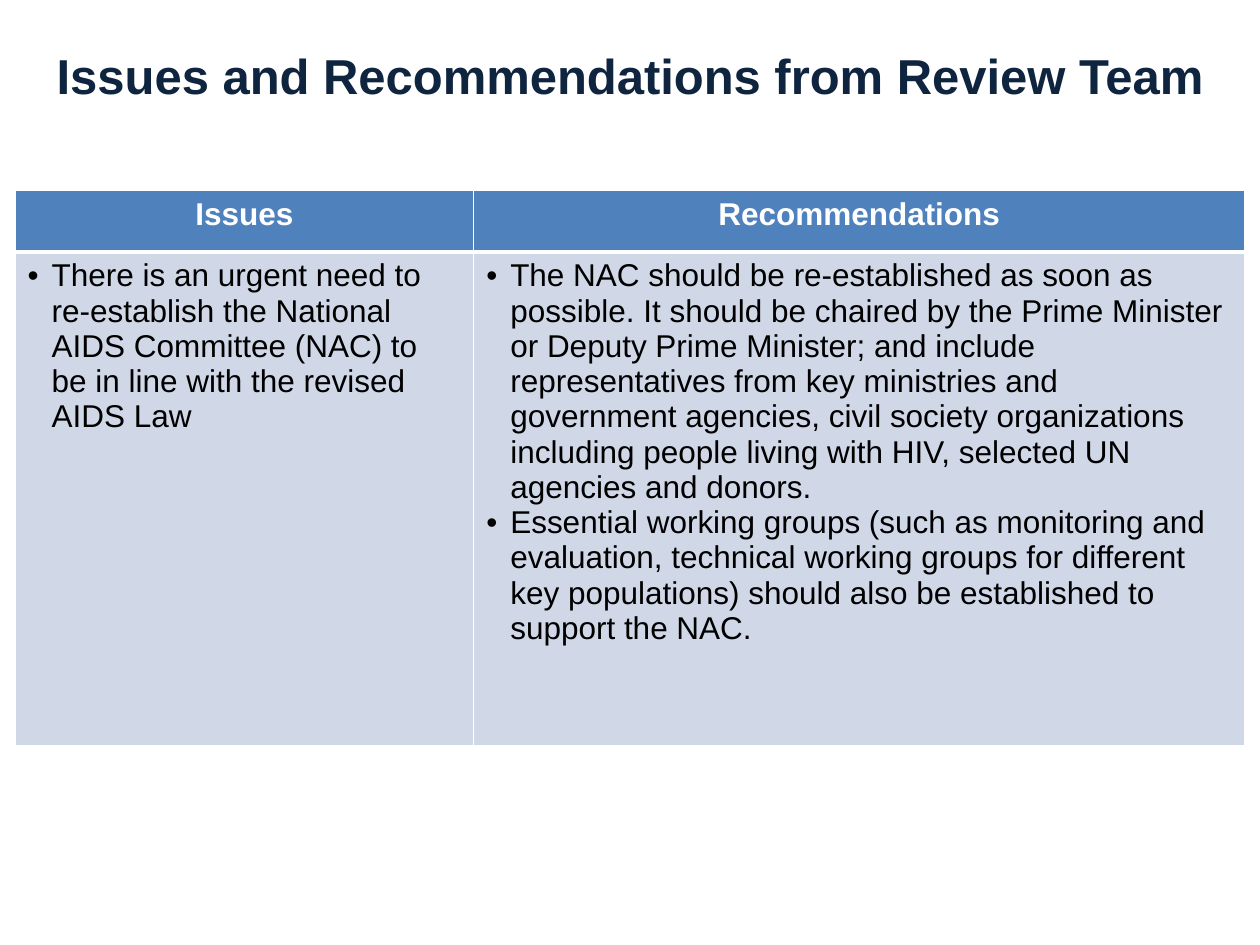
from lxml import etree
from pptx import Presentation
from pptx.dml.color import RGBColor
from pptx.enum import text
from pptx.oxml import ns
from pptx.util import Inches, Pt

COLORS = {"title": "0F243E", "header": "4F81BD", "body": "D0D8E8",
          "white": "FFFFFF", "black": "000000"}
ROWS = [
    [["Issues"], ["Recommendations"]],
    [
        ["There is an urgent need to re-establish the National AIDS Committee (NAC) "
         "to be in line with the revised AIDS Law"],
        ["The NAC should be re-established as soon as possible. It should be chaired by "
         "the Prime Minister or Deputy Prime Minister; and include representatives from "
         "key ministries and government agencies, civil society organizations including "
         "people living with HIV, selected UN agencies and donors.",
         "Essential working groups (such as monitoring and evaluation, technical working "
         "groups for different key populations) should also be established to support "
         "the NAC."],
    ],
]


def write(para, words, size, color, bold):
    span = para.add_run()
    span.text = words
    span.font.name = "Arial"
    span.font.size = Pt(size)
    span.font.bold = bold
    span.font.color.rgb = RGBColor.from_string(COLORS[color])
    if bold:
        para.alignment = text.PP_ALIGN.CENTER


def add_border(cell, side, width):
    line = etree.SubElement(cell._tc.get_or_add_tcPr(), ns.qn(f"a:ln{side}"), w=str(Pt(width)))
    fill = etree.SubElement(line, ns.qn("a:solidFill"))
    etree.SubElement(fill, ns.qn("a:srgbClr"), val=COLORS["white"])


deck = Presentation()
deck.slide_width, deck.slide_height = Inches(10), Inches(7.5)
page = deck.slides.add_slide(deck.slide_layouts[6])

title = page.shapes.add_textbox(Inches(0), Inches(-0.03), Inches(10), Inches(1.25))
title.fill.solid()
title.fill.fore_color.rgb = RGBColor.from_string(COLORS["white"])
title.text_frame.word_wrap = True
title.text_frame.vertical_anchor = text.MSO_ANCHOR.MIDDLE
write(title.text_frame.paragraphs[0], "Issues and Recommendations from Review Team", 28, "title", True)

table = page.shapes.add_table(2, 2, Inches(0.12), Inches(1.51), Inches(9.76), Inches(4.41)).table
for column, width in zip(table.columns, (3.64, 6.12)):
    column.width = Inches(width)
for row, height in zip(table.rows, (0.49, 3.92)):
    row.height = Inches(height)

for row_index, row in enumerate(ROWS):
    is_header = row_index == 0
    for column_index, paragraphs in enumerate(row):
        cell = table.cell(row_index, column_index)
        for side in "LRTB":
            add_border(cell, side, 3 if side == ("B" if is_header else "T") else 1)
        cell.fill.solid()
        cell.fill.fore_color.rgb = RGBColor.from_string(COLORS["header" if is_header else "body"])
        for index, words in enumerate(paragraphs):
            frame = cell.text_frame
            para = frame.add_paragraph() if index else frame.paragraphs[0]
            write(para, words, 18, "white" if is_header else "black", is_header)
            if not is_header:
                properties = para._p.get_or_add_pPr()
                properties.set("marL", str(Inches(0.19)))
                properties.set("indent", str(Inches(-0.19)))
                etree.SubElement(properties, ns.qn("a:buFont"), typeface="Arial")
                etree.SubElement(properties, ns.qn("a:buChar"), char="•")

deck.save("out.pptx")
